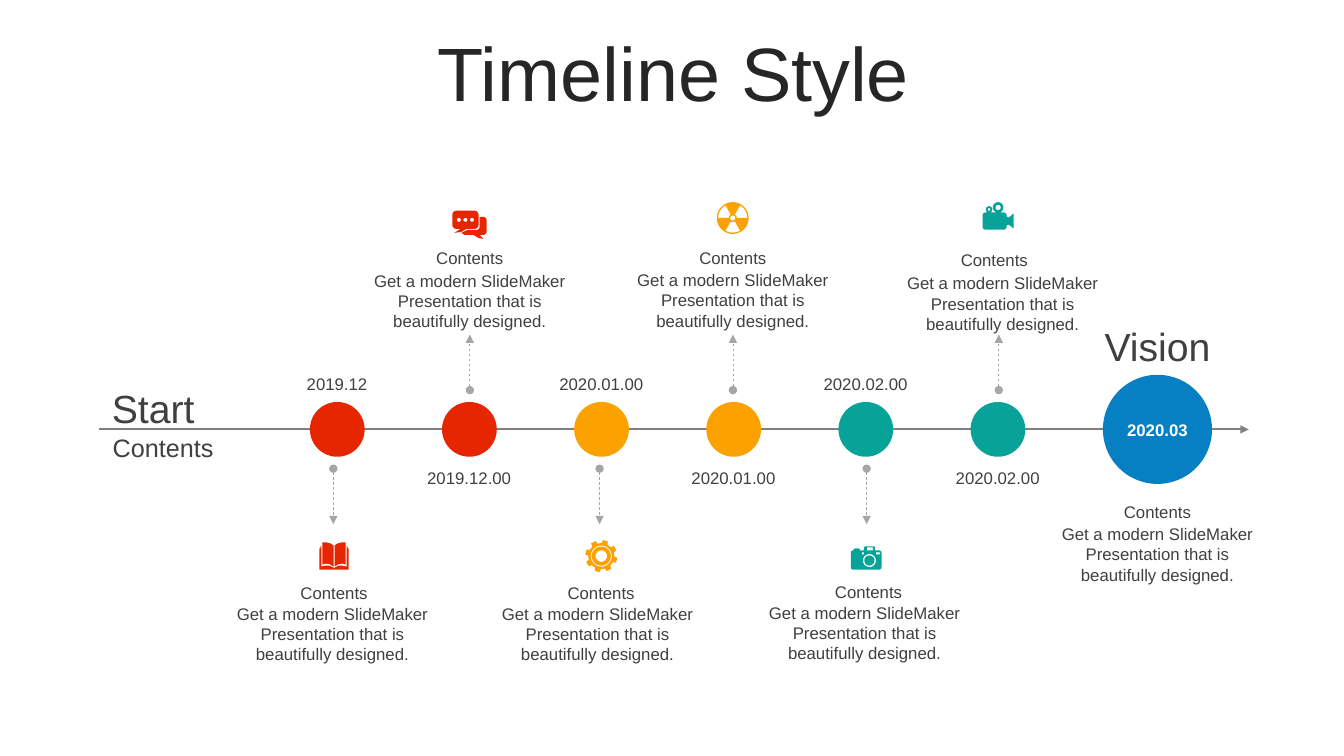
from dataclasses import dataclass
from math import cos, radians, sin

from lxml.etree import SubElement
from pptx import Presentation
from pptx.dml.color import RGBColor
from pptx.enum.dml import MSO_LINE
from pptx.enum.shapes import MSO_CONNECTOR, MSO_SHAPE
from pptx.enum.text import MSO_ANCHOR as Anchor, MSO_AUTO_SIZE as AutoSize, PP_ALIGN as Align
from pptx.oxml.ns import qn
from pptx.util import Cm, Pt

Point = tuple[float, float]
Contour = list[Point]

FONT = "Arial"
RED = RGBColor(0xE6, 0x26, 0x01)
AMBER = RGBColor(0xFB, 0xA2, 0x00)
TEAL = RGBColor(0x07, 0xA3, 0x98)
BLUE = RGBColor(0x06, 0x80, 0xC3)
WHITE = RGBColor(0xFF, 0xFF, 0xFF)
TITLE_INK = RGBColor(0x26, 0x26, 0x26)
INK = RGBColor(0x40, 0x40, 0x40)
AXIS_GRAY = RGBColor(0x80, 0x80, 0x80)
ARROW_GRAY = RGBColor(0xA6, 0xA6, 0xA6)

# Lengths below are centimetres
AXIS_Y = 10.82
FIRST_X, STEP_X = 8.5, 3.33
VISION_X = 29.17
NODE_SIZE, VISION_SIZE = 1.38, 2.75
LABEL_HEIGHT = 0.76
BLURB = "Get a modern SlideMaker Presentation that is beautifully designed."


# Icon outlines, drawn on a grid of about 30 units
def arc(x: float, y: float, radius: float, start: int, end: int) -> Contour:
    steps = max(2, abs(end - start) // 10)
    angles = [radians(start + (end - start) * i / steps) for i in range(steps + 1)]
    return [(x + radius * cos(a), y + radius * sin(a)) for a in angles]


def circle(x: float, y: float, radius: float) -> Contour:
    return arc(x, y, radius, 0, 360)


def rectangle(left: float, top: float, right: float, bottom: float) -> Contour:
    return [(left, top), (right, top), (right, bottom), (left, bottom)]


def mirror(points: Contour, width: float) -> Contour:
    return [(width - x, y) for x, y in reversed(points)]


def book() -> list[Contour]:
    page = [(3, 0), (7, 0), (11, 1), (14, 3), (14, 24), (10, 21.5), (6, 21), (3, 22)]
    cover = [(0, 27), (0, 6), (1, 6), (1, 4), (2, 4), (2, 24), (6, 23), (10, 23), (14, 25)]
    return [page, mirror(page, 29), cover + mirror(cover, 29)]


def speech() -> list[Contour]:
    front = (arc(4, 4, 4, 180, 270) + arc(22, 4, 4, 270, 360) + arc(22, 14, 4, 0, 90)
             + [(14, 18), (9, 21), (2, 22), (8, 18)] + arc(4, 14, 4, 90, 180))
    back = ([(27, 6)] + arc(30.5, 9.5, 3.5, 270, 360) + arc(30.5, 20.5, 3.5, 0, 90)
            + [(27, 24), (31, 28), (26, 27), (21, 24), (12, 24), (9, 22), (15, 19)]
            + arc(24, 16, 3, 90, 0))
    return [front, back] + [circle(x, 9, 2) for x in (6.5, 13, 19.5)]


def gear() -> list[Contour]:
    teeth: Contour = []
    for angle in range(-75, 285, 45):
        for radius, turn in ((13, -13), (16, -9), (16, 9), (13, 13)):
            teeth += arc(15.5, 15.5, radius, angle + turn, angle + turn)[:1]
    return [teeth] + [circle(15.5, 15.5, radius) for radius in (10.5, 9.5, 5.7)]


def radiation() -> list[Contour]:
    blades = [arc(16, 15.5, 14.5, a, a + 60) + arc(16, 15.5, 4, a + 60, a)
              for a in (60, 180, 300)]
    return [circle(16, 15.5, 15.8), circle(16, 15.5, 2.5)] + blades


def camera() -> list[Contour]:
    body = (arc(2.5, 6.5, 2.5, 180, 270) + [(3, 3), (4, 2), (8, 2), (9, 3), (9, 4), (13, 4)]
            + [(13, 1), (14, 0), (23, 0), (24, 1), (24, 4)] + arc(28, 6.5, 2.5, 270, 360)
            + arc(28, 20.5, 2.5, 0, 90) + arc(2.5, 20.5, 2.5, 90, 180))
    windows = [rectangle(11, 6, 13, 8), rectangle(25, 6, 29, 8), rectangle(16, 1, 22, 4)]
    return [body, circle(18.5, 14, 6.5), circle(18.5, 14, 5)] + windows


def video() -> list[Contour]:
    body = (arc(3, 13, 3, 180, 270) + arc(21, 13, 3, 270, 360)
            + [(24, 14), (26, 15), (31, 11), (31, 26), (26, 22), (24, 23)]
            + arc(21, 24, 3, 0, 90) + arc(3, 24, 3, 90, 180))
    reels = [circle(6.5, 7, 3.2), circle(6.5, 7, 1.3), circle(15.5, 5, 5.2), circle(15.5, 5, 2.6)]
    return [body] + reels


@dataclass(frozen=True)
class Milestone:
    date: str
    color: RGBColor
    arrow_x: float
    label: Point  # top centre of the heading
    blurb: Point  # top centre of the description
    icon: list[Contour]
    icon_at: Point


MILESTONES = [
    Milestone("2019.12", RED, 8.4, (8.42, 14.55), (8.38, 15.09), book(), (8.05, 13.67)),
    Milestone("2019.12.00", RED, 11.84, (11.84, 6.12), (11.84, 6.7), speech(), (11.4, 5.31)),
    Milestone("2020.01.00", AMBER, 15.11, (15.15, 14.55), (15.06, 15.09), gear(), (14.76, 13.62)),
    Milestone("2020.01.00", AMBER, 18.47, (18.47, 6.12), (18.47, 6.68), radiation(), (18.06, 5.1)),
    Milestone("2020.02.00", TEAL, 21.84, (21.89, 14.53), (21.79, 15.06), camera(), (21.44, 13.77)),
    Milestone("2020.02.00", TEAL, 25.17, (25.06, 6.17), (25.27, 6.76), video(), (24.76, 5.1)),
]


def add_text(page, text: str, left: float, top: float, width: float, height: float,
             size: int = 12, color: RGBColor = INK, align=Align.CENTER,
             anchor=Anchor.TOP, bold: bool = False) -> None:
    box = page.shapes.add_textbox(Cm(left), Cm(top), Cm(width), Cm(height))
    frame = box.text_frame
    frame.word_wrap = True
    frame.auto_size = AutoSize.SHAPE_TO_FIT_TEXT
    frame.vertical_anchor = anchor
    para = frame.paragraphs[0]
    para.text, para.alignment = text, align
    font = para.font
    font.name, font.size, font.bold = FONT, Pt(size), bold
    font.color.rgb = color


def add_contents(page, label: Point, blurb: Point) -> None:
    add_text(page, BLURB, blurb[0] - 2.8, blurb[1], 5.6, 1.8)
    add_text(page, "Contents", label[0] - 2.8, label[1], 5.6, LABEL_HEIGHT)


def add_arrow(page, start: Point, end: Point, color: RGBColor, width: float,
              dotted: bool = False) -> None:
    arrow = page.shapes.add_connector(
        MSO_CONNECTOR.STRAIGHT, *(Cm(value) for value in start + end))
    arrow.line.color.rgb = color
    arrow.line.width = Pt(width)
    properties = arrow.element.spPr
    outline = properties.find(qn("a:ln"))
    if dotted:
        arrow.line.dash_style = MSO_LINE.DASH
        SubElement(outline, qn("a:headEnd"), type="oval")
    SubElement(outline, qn("a:tailEnd"), type="triangle")
    SubElement(properties, qn("a:effectLst"))


def paint(shape, color: RGBColor) -> None:
    shape.shadow.inherit = False
    shape.fill.solid()
    shape.fill.fore_color.rgb = color
    shape.line.fill.background()


def add_node(page, x: float, size: float, color: RGBColor) -> None:
    node = page.shapes.add_shape(MSO_SHAPE.OVAL, Cm(x - size / 2), Cm(AXIS_Y - size / 2),
                                 Cm(size), Cm(size))
    paint(node, color)


def add_icon(page, contours: list[Contour], at: Point, color: RGBColor) -> None:
    fine = [[(x * 100, y * 100) for x, y in contour] for contour in contours]
    builder = page.shapes.build_freeform(*fine[0][0], scale=Cm(2.54) / 10000)
    builder.add_line_segments(fine[0][1:], close=True)
    for contour in fine[1:]:
        builder.move_to(*contour[0])
        builder.add_line_segments(contour[1:], close=True)
    paint(builder.convert_to_shape(Cm(at[0]), Cm(at[1])), color)


def main() -> None:
    deck = Presentation()
    deck.slide_width, deck.slide_height = Cm(33.87), Cm(19.05)
    page = deck.slides.add_slide(deck.slide_layouts[5])

    # Title
    title = page.shapes.title
    title.left, title.top, title.width, title.height = Cm(0.89), Cm(0.94), Cm(32.16), Cm(2.01)
    title.text_frame.auto_size = AutoSize.NONE
    title.text_frame.vertical_anchor = Anchor.MIDDLE
    para = title.text_frame.paragraphs[0]
    para.text, para.alignment, para.line_spacing = "Timeline Style", Align.CENTER, 0.9
    para.font.name, para.font.size = FONT, Pt(54)
    para.font.color.rgb = TITLE_INK

    # Axis and its start
    add_arrow(page, (2.49, AXIS_Y), (31.47, AXIS_Y), AXIS_GRAY, 1.5)
    add_text(page, "Start", 2.57, 9.55, 3.3, 1.45, 28, align=Align.LEFT, anchor=Anchor.MIDDLE)
    add_text(page, "Contents", 2.59, 10.77, 3.25, LABEL_HEIGHT, 18, align=Align.LEFT)

    # Milestones, with contents below and above the axis in turn
    for index, stone in enumerate(MILESTONES):
        x = FIRST_X + index * STEP_X
        below = index % 2 == 0
        dot_y, tip_y, date_y = (11.81, 13.21, 9.3) if below else (9.83, 8.43, 11.66)
        add_arrow(page, (stone.arrow_x, dot_y), (stone.arrow_x, tip_y), ARROW_GRAY, 0.5, True)
        add_node(page, x, NODE_SIZE, stone.color)
        add_text(page, stone.date, x - 1.73, date_y, 3.45, LABEL_HEIGHT)
        add_contents(page, stone.label, stone.blurb)
        add_icon(page, stone.icon, stone.icon_at, stone.color)

    # Vision
    add_node(page, VISION_X, VISION_SIZE, BLUE)
    add_text(page, "Vision", VISION_X - 1.65, 7.98, 3.3, 1.45, 28, anchor=Anchor.MIDDLE)
    add_text(page, "2020.03", VISION_X - 1.6, 10.44, 3.2, LABEL_HEIGHT,
             color=WHITE, anchor=Anchor.MIDDLE, bold=True)
    add_contents(page, (VISION_X, 12.52), (VISION_X, 13.08))

    deck.save("out.pptx")


if __name__ == "__main__":
    main()
